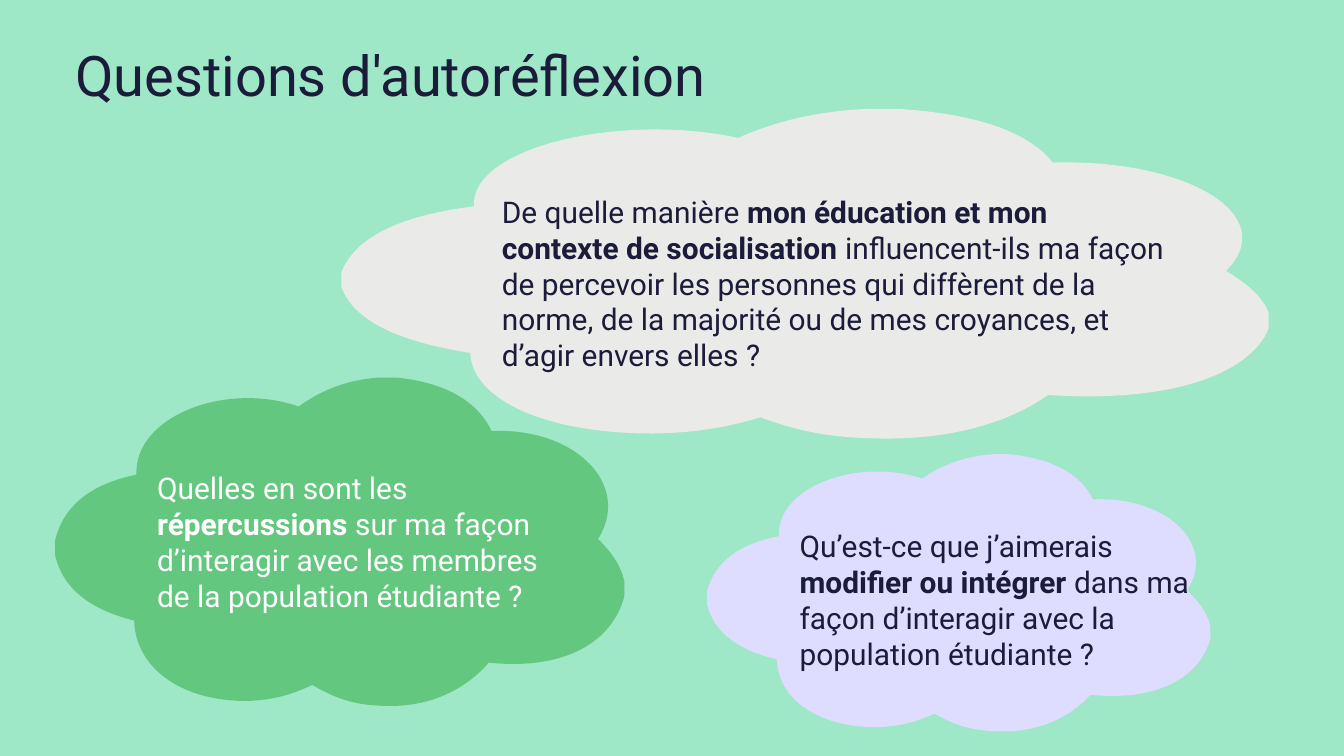
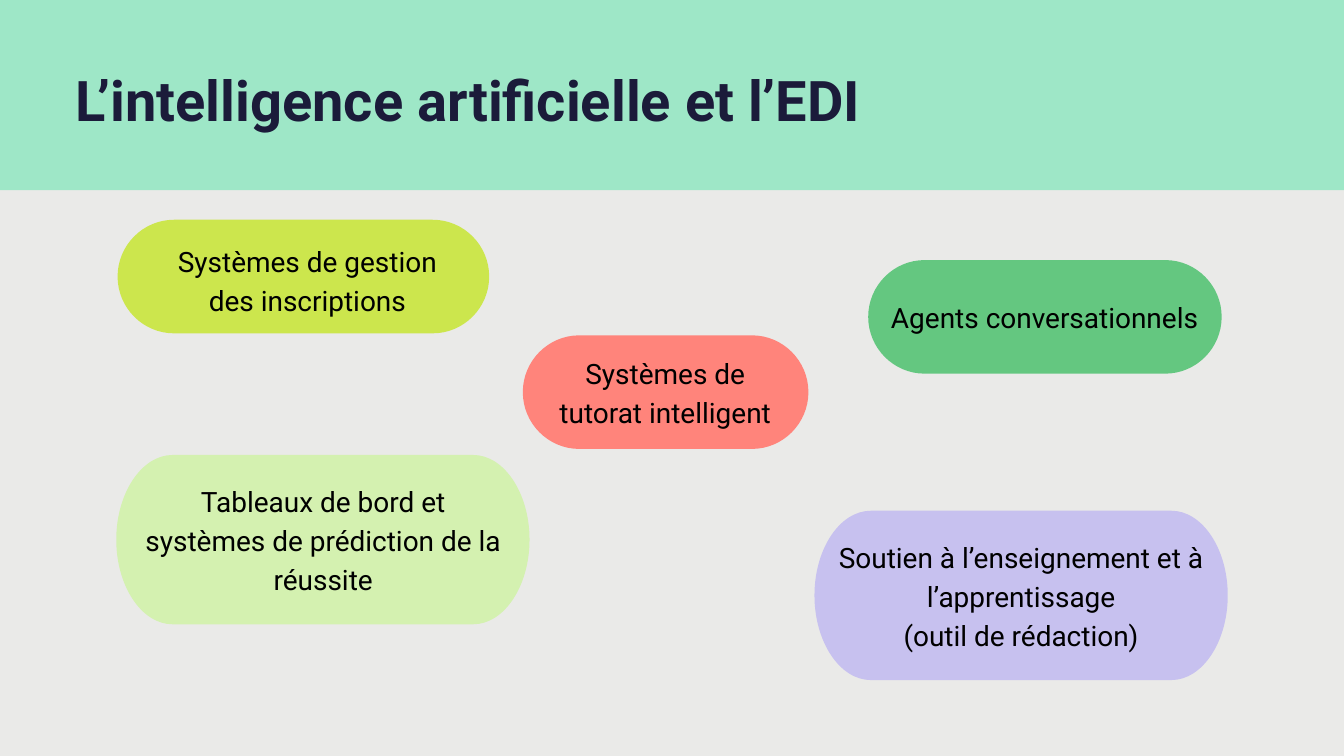
"""Build two slides on self-reflection and on artificial intelligence and EDI."""
from dataclasses import dataclass

from lxml.etree import SubElement
from pptx import Presentation
from pptx.dml.color import RGBColor
from pptx.enum.shapes import MSO_SHAPE
from pptx.enum.text import MSO_AUTO_SIZE, PP_ALIGN
from pptx.oxml.ns import qn
from pptx.util import Inches, Pt


@dataclass(frozen=True)
class Theme:
    font: str = "Roboto"
    mint: str = "9EE7C7"
    stone: str = "EAEAE8"
    ink: str = "1B1B3A"
    white: str = "FFFFFF"
    black: str = "000000"
    green: str = "64C780"
    lavender: str = "DEDCFF"
    lilac: str = "C7C1EF"
    lime: str = "CCE64D"
    coral: str = "FF847B"
    pale_lime: str = "D4F1B0"
    title_size: float = 60
    title_spacing: float = 64.8
    question_size: float = 32
    pill_size: float = 30
    pill_spacing: float = 42


THEME = Theme()
SLIDE_WIDTH, SLIDE_HEIGHT = 20, 11.25
BAND_HEIGHT = 2.83
PILL_RADIUS = 0.84
ARC_HANDLE = 0.55

CLOUD_START = (56.7, 0)
CLOUD_CURVES = [
    [(57.9, 0), (59, 0), (60.1, 0)],
    [(68.8, 1.6), (74.2, 7.3), (76.7, 16.3)],
    [(91.2, 15.1), (101.4, 32.4), (95.4, 49.2)],
    [(97.5, 52.9), (99.3, 56.7), (100, 62)],
    [(100, 63.7), (100, 65.1), (100, 66.7)],
    [(98, 80.2), (89.8, 89.4), (76.2, 86.9)],
    [(72.7, 93.9), (66.4, 101.2), (56.7, 100)],
    [(51.7, 99.6), (48.3, 96.9), (45.2, 93.7)],
    [(42, 96.3), (38.6, 98.4), (33.6, 98.6)],
    [(21.9, 98.6), (14.1, 88.2), (13.9, 74.1)],
    [(6.4, 70.8), (1.4, 64.7), (0, 54.1)],
    [(0, 52.4), (0, 51), (0, 49.6)],
    [(1.5, 39), (6.3, 32.4), (14.3, 29.6)],
    [(13.8, 12), (29.8, 1), (42.8, 8.8)],
    [(45.9, 4.9), (50.4, 0.8), (56.7, 0)],
]

REFLECTION_TITLE = ("Questions d'autoréflexion", (1.12, 0.7, 16.38, 0.92), False)
QUESTIONS = [
    dict(
        cloud=(5.08, 1.62, 13.8, 4.9), fill=THEME.stone,
        box=(7.37, 2.83, 10.1, 2.82), color=THEME.ink,
        spans=[
            ("De quelle manière ", False),
            ("mon éducation et mon contexte de socialisation ", True),
            ("influencent-ils ma façon de percevoir les personnes qui diffèrent "
             "de la norme, de la majorité ou de mes croyances, et d’agir envers elles ?", False),
        ],
    ),
    dict(
        cloud=(0.82, 5.62, 8.47, 4.88), fill=THEME.green,
        box=(2.24, 6.94, 6.34, 2.26), color=THEME.white,
        spans=[
            ("Quelles en sont les ", False),
            ("répercussions", True),
            (" sur ma façon d’interagir avec les membres de la population étudiante ?", False),
        ],
    ),
    dict(
        cloud=(10.52, 6.76, 7.49, 4.12), fill=THEME.lavender,
        box=(11.8, 7.81, 6.21, 2.26), color=THEME.ink,
        spans=[
            ("Qu’est-ce que j’aimerais ", False),
            ("modifier ou intégrer", True),
            (" dans ma façon d’interagir avec la population étudiante ?", False),
        ],
    ),
]

SYSTEMS_TITLE = ("L’intelligence artificielle et l’EDI", (1.12, 1.08, 14.74, 0.92), True)
SYSTEMS = [
    (["Systèmes de gestion", "des inscriptions"],
     (1.75, 3.27, 5.53, 1.69), (2.5, 3.55, 4.15, 1.16), THEME.lime),
    (["Systèmes de", "tutorat intelligent"],
     (7.78, 4.99, 4.25, 1.69), (8.23, 5.22, 3.34, 1.16), THEME.coral),
    (["Tableaux de bord et", "systèmes de prédiction de la réussite"],
     (1.73, 6.77, 6.15, 2.52), (1.75, 7.12, 6.12, 1.74), THEME.pale_lime),
    (["Agents conversationnels"],
     (12.92, 3.87, 5.26, 1.69), (13.17, 4.39, 4.75, 0.57), THEME.green),
    (["Soutien à l’enseignement et à l’apprentissage", "(outil de rédaction)"],
     (12.12, 7.6, 6.15, 2.52), (12.47, 7.96, 5.45, 1.74), THEME.lilac),
]


def add_page(deck, background):
    page = deck.slides.add_slide(deck.slide_layouts[6])
    page.background.fill.solid()
    page.background.fill.fore_color.rgb = RGBColor.from_string(background)
    return page


def paint(shape, color):
    shape.fill.solid()
    shape.fill.fore_color.rgb = RGBColor.from_string(color)
    shape.line.fill.background()
    shape.shadow.inherit = False


def add_outline(page, start, segments, color):
    """Draw a closed outline: one point makes a line, three make a curve."""
    def place(point):
        return Inches(point[0]), Inches(point[1])

    builder = page.shapes.build_freeform(*place(start), scale=1.0)
    builder.add_line_segments([place(point) for segment in segments for point in segment], close=True)
    shape = builder.convert_to_shape()
    steps = iter(list(shape.element.iter(qn("a:lnTo"))))
    for segment in segments:
        first, *others = [next(steps) for _ in segment]
        if others:
            outline = first.getparent()
            curve = SubElement(outline, qn("a:cubicBezTo"))
            outline.replace(first, curve)
            for step in (first, *others):
                curve.append(step[0])
            for step in others:
                outline.remove(step)
    paint(shape, color)


def add_cloud(page, area, color):
    left, top, width, height = area

    def scale(point):
        return left + point[0] * width / 100, top + point[1] * height / 100

    curves = [[scale(point) for point in curve] for curve in CLOUD_CURVES]
    add_outline(page, scale(CLOUD_START), curves, color)


def add_pill(page, area, color):
    left, top, width, height = area
    right, bottom, middle = left + width, top + height, top + height / 2
    inner_left, inner_right = left + PILL_RADIUS, right - PILL_RADIUS
    reach_x, reach_y = ARC_HANDLE * PILL_RADIUS, ARC_HANDLE * height / 2
    segments = [
        [(inner_right + reach_x, top), (right, middle - reach_y), (right, middle)],
        [(right, middle + reach_y), (inner_right + reach_x, bottom), (inner_right, bottom)],
        [(inner_left, bottom)],
        [(inner_left - reach_x, bottom), (left, middle + reach_y), (left, middle)],
        [(left, middle - reach_y), (inner_left - reach_x, top), (inner_left, top)],
    ]
    add_outline(page, (inner_right, top), segments, color)


def add_text(page, area, paragraphs, size, color, spacing=None, align=None, inset=True):
    box = page.shapes.add_textbox(*map(Inches, area))
    frame = box.text_frame
    frame.word_wrap = True
    frame.auto_size = MSO_AUTO_SIZE.SHAPE_TO_FIT_TEXT
    if not inset:
        frame.margin_left = frame.margin_right = frame.margin_top = frame.margin_bottom = 0
    for index, spans in enumerate(paragraphs):
        para = frame.add_paragraph() if index else frame.paragraphs[0]
        para.alignment = align
        if spacing:
            para.line_spacing = Pt(spacing)
        for text, bold in spans:
            span = para.add_run()
            span.text = text
            span.font.name = THEME.font
            span.font.size = Pt(size)
            span.font.bold = bold
            span.font.color.rgb = RGBColor.from_string(color)


def add_title(page, text, area, bold):
    add_text(page, area, [[(text, bold)]], THEME.title_size, THEME.ink,
             THEME.title_spacing, inset=False)


def build_reflection(deck):
    page = add_page(deck, THEME.mint)
    add_title(page, *REFLECTION_TITLE)
    for question in QUESTIONS:
        add_cloud(page, question["cloud"], question["fill"])
        add_text(page, question["box"], [question["spans"]],
                 THEME.question_size, question["color"])


def build_systems(deck):
    page = add_page(deck, THEME.stone)
    band = page.shapes.add_shape(MSO_SHAPE.RECTANGLE, 0, 0, Inches(SLIDE_WIDTH), Inches(BAND_HEIGHT))
    paint(band, THEME.mint)
    add_title(page, *SYSTEMS_TITLE)
    for lines, pill, box, color in SYSTEMS:
        add_pill(page, pill, color)
        add_text(page, box, [[(line, False)] for line in lines], THEME.pill_size,
                 THEME.black, THEME.pill_spacing, PP_ALIGN.CENTER, inset=False)


def main():
    deck = Presentation()
    deck.slide_width, deck.slide_height = Inches(SLIDE_WIDTH), Inches(SLIDE_HEIGHT)
    build_reflection(deck)
    build_systems(deck)
    deck.save("out.pptx")


if __name__ == "__main__":
    main()
